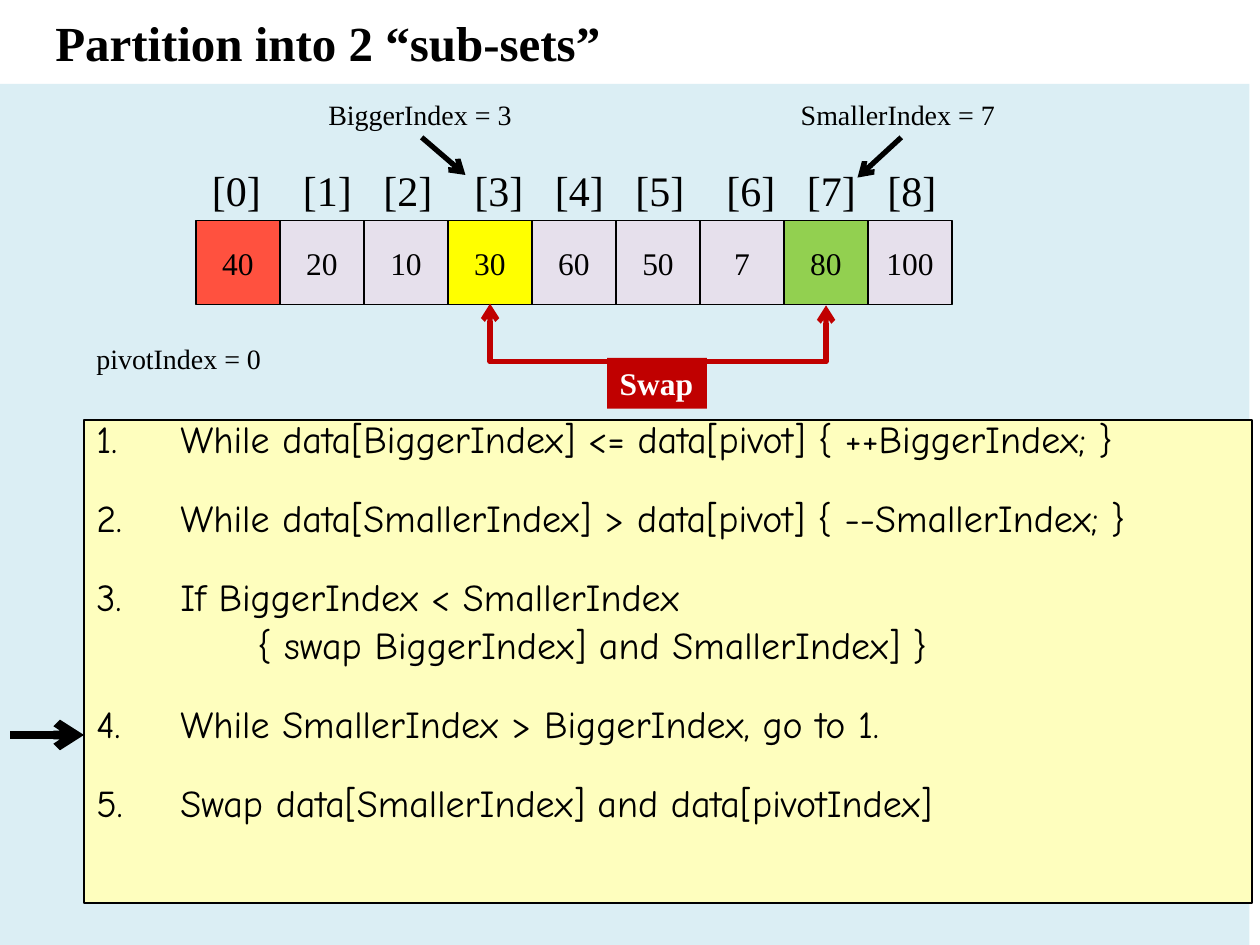
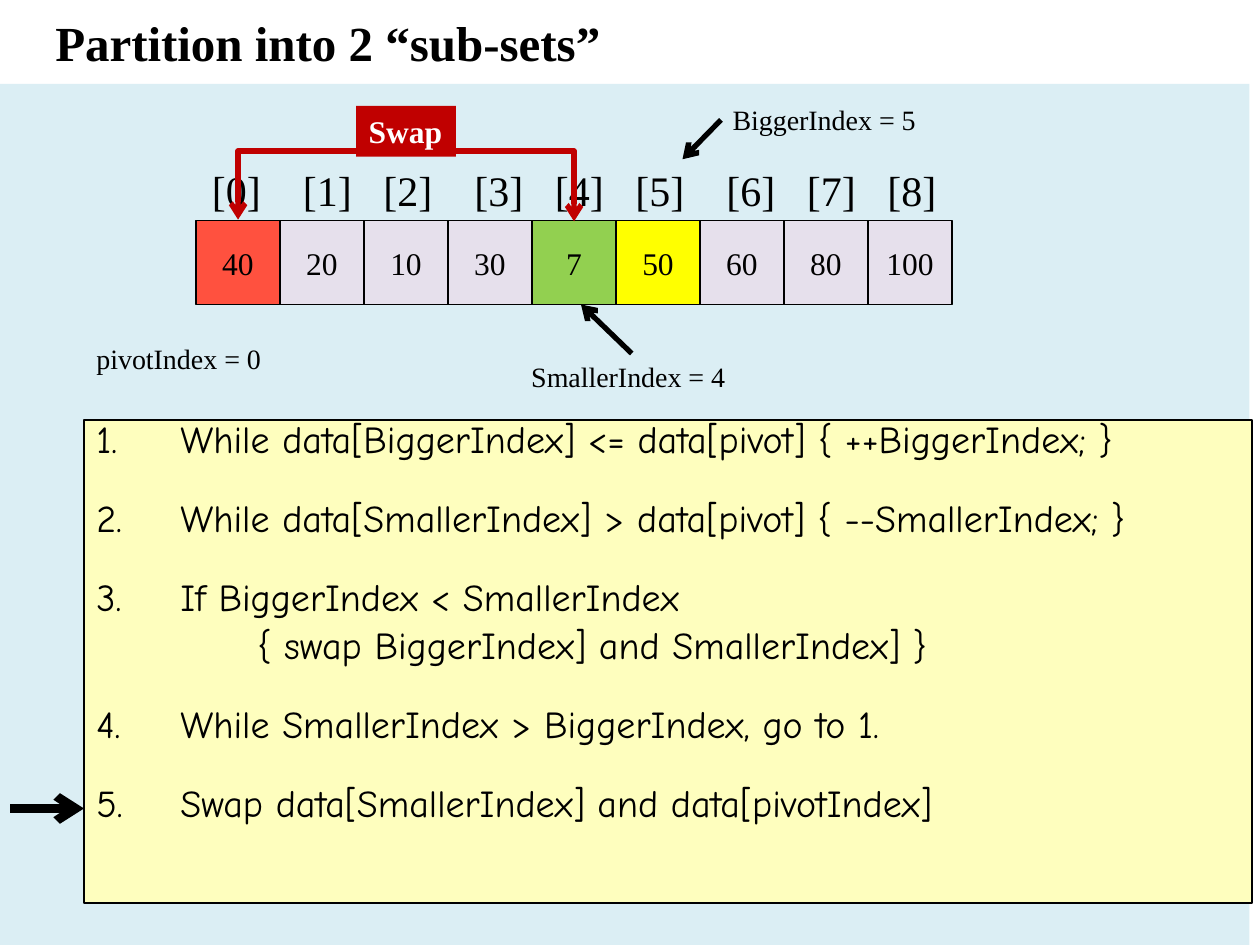
from lxml import etree
from pptx import Presentation
from pptx.dml.color import RGBColor
from pptx.enum.shapes import MSO_CONNECTOR, MSO_SHAPE
from pptx.enum.text import MSO_ANCHOR, PP_ALIGN
from pptx.oxml.ns import qn
from pptx.util import Pt

RECTANGLE = MSO_SHAPE.RECTANGLE
STRAIGHT, ELBOW = MSO_CONNECTOR.STRAIGHT, MSO_CONNECTOR.ELBOW
TOP, MIDDLE = MSO_ANCHOR.TOP, MSO_ANCHOR.MIDDLE
LEFT, CENTER = PP_ALIGN.LEFT, PP_ALIGN.CENTER

COLORS = {
    "black": "000000", "white": "FFFFFF", "panel": "DBEEF4", "steps": "FEFEBE",
    "cell": "E6E0EC", "pivot": "FF513F", "bigger": "FFFF00",
    "smaller": "92D050", "swap": "C00000",
}
SERIF, HAND = "Times New Roman", "Comic Neue"

# Array geometry
CELL, ARRAY_LEFT, ARRAY_TOP = 48, 112, 126
INDEX_GAPS = [52, 46, 52, 46, 46, 52, 46, 46]

# Each step: first line, then any indented continuation lines
STEPS = [
    ["While data[BiggerIndex] <= data[pivot] { ++BiggerIndex; }"],
    ["While data[SmallerIndex] > data[pivot] { --SmallerIndex; }"],
    ["If BiggerIndex < SmallerIndex", "{ swap BiggerIndex] and SmallerIndex] }"],
    ["While SmallerIndex > BiggerIndex, go to 1."],
    ["Swap data[SmallerIndex] and data[pivotIndex]"],
]


def rgb(color):
    return RGBColor.from_string(COLORS[color])


def add_run(paragraph, text, size, color="black", bold=False, font=SERIF):
    run = paragraph.add_run()
    run.text = text
    run.font.size, run.font.name, run.font.bold = Pt(size), font, bold
    run.font.color.rgb = rgb(color)


def add_box(slide, left, top, width, height, fill, outlined=False):
    box = slide.shapes.add_shape(RECTANGLE, Pt(left), Pt(top), Pt(width), Pt(height))
    box.shadow.inherit = False
    box.fill.solid()
    box.fill.fore_color.rgb = rgb(fill)
    if outlined:
        box.line.color.rgb = rgb("black")
        box.line.width = Pt(0.75)
    else:
        box.line.fill.background()
    return box


def write_line(box, text, size, color="black", bold=False,
               align=LEFT, anchor=TOP, wrap=False):
    frame = box.text_frame
    frame.word_wrap, frame.vertical_anchor = wrap, anchor
    paragraph = frame.paragraphs[0]
    paragraph.alignment = align
    add_run(paragraph, text, size, color, bold)
    return paragraph


def add_label(slide, text, left, top, width, height=26.5, size=16):
    label = slide.shapes.add_textbox(Pt(left), Pt(top), Pt(width), Pt(height))
    return write_line(label, text, size)


def style_connector(connector, color, width, ends):
    connector.line.color.rgb = rgb(color)
    connector.line.width = Pt(width)
    line = connector.line._get_or_add_ln()
    for end in ends:
        etree.SubElement(line, qn(f"a:{end}"), type="arrow")
    etree.SubElement(connector._element.spPr, qn("a:effectLst"))


def add_arrow(slide, start, end, width=3):
    arrow = slide.shapes.add_connector(STRAIGHT, *map(Pt, start + end))
    style_connector(arrow, "black", width, ["tailEnd"])


def add_swap_link(slide, first, last, y, bend):
    """Join two cells with a bracket that runs `bend` points below y."""
    span, thickness = (last - first) * CELL, 1
    center = ARRAY_LEFT + (first + last + 1) * CELL / 2
    left, top = center - thickness / 2, y - span / 2
    link = slide.shapes.add_connector(
        ELBOW, Pt(left), Pt(top), Pt(left + thickness), Pt(top + span))
    properties = link._element.spPr
    transform = properties.find(qn("a:xfrm"))
    transform.set("rot", str(270 * 60000))
    transform.set("flipH", "1")
    adjustments = properties.find(qn("a:prstGeom")).get_or_add_avLst()
    etree.SubElement(adjustments, qn("a:gd"), name="adj1",
                     fmla=f"val {round(bend / thickness * 100000)}")
    style_connector(link, "swap", 3, ["headEnd", "tailEnd"])


def add_swap_badge(slide, left, top):
    badge = add_box(slide, left, top, 57, 29, "swap")
    write_line(badge, "Swap", 18, "white", bold=True)


def add_array(slide, values, bigger, smaller):
    roles = {0: "pivot", bigger: "bigger", smaller: "smaller"}
    for i, value in enumerate(values):
        cell = add_box(slide, ARRAY_LEFT + i * CELL, ARRAY_TOP, CELL, CELL,
                       roles.get(i, "cell"), outlined=True)
        write_line(cell, str(value), 18, align=CENTER, anchor=MIDDLE)
    # Index row, spaced with tab stops
    indices = "\t".join(f"[{i}]" for i in range(len(values)))
    row = add_label(slide, indices, 114, 90.5, 450, 36, 24)
    tabs = etree.SubElement(row._p.get_or_add_pPr(), qn("a:tabLst"))
    for i in range(len(INDEX_GAPS)):
        etree.SubElement(tabs, qn("a:tab"), pos=str(Pt(sum(INDEX_GAPS[:i + 1]))), algn="l")


def add_steps(slide):
    box = add_box(slide, 48, 240, 667.5, 276, "steps", outlined=True)
    frame = box.text_frame
    frame.word_wrap, frame.vertical_anchor = True, TOP
    for number, lines in enumerate(STEPS, 1):
        for line_index, text in enumerate(lines):
            is_first = number == 1 and line_index == 0
            paragraph = frame.paragraphs[0] if is_first else frame.add_paragraph()
            paragraph.alignment = LEFT
            paragraph.line_spacing = Pt(20)
            paragraph.space_before = Pt(0 if is_first else 7.4 if line_index else 25.15)
            layout = paragraph._p.get_or_add_pPr()
            layout.set("marL", str(Pt(92 if line_index else 48)))
            layout.set("indent", str(Pt(0 if line_index else -48)))
            if line_index == 0:
                etree.SubElement(layout, qn("a:buAutoNum"),
                                 type="arabicPeriod", startAt=str(number))
            add_run(paragraph, text, 21.7, font=HAND)


def add_partition_slide(deck, values, bigger, smaller, step_y):
    slide = deck.slides.add_slide(deck.slide_layouts[6])
    add_box(slide, 0, 48, 714, 492, "panel")
    title = add_box(slide, 24.5, 6, 461.5, 36, "white")
    write_line(title, "Partition into 2 “sub-sets”", 28, bold=True,
               anchor=MIDDLE, wrap=True)
    add_steps(slide)
    add_array(slide, values, bigger, smaller)
    add_label(slide, "pivotIndex = 0", 48, 191.5, 110)
    add_arrow(slide, (6, step_y), (48, step_y), width=5)
    return slide


def main():
    deck = Presentation()
    deck.slide_width, deck.slide_height = Pt(720), Pt(540)

    # Swap the bigger and smaller values
    scan = add_partition_slide(
        deck, [40, 20, 10, 30, 60, 50, 7, 80, 100], bigger=3, smaller=7, step_y=420)
    add_label(scan, "BiggerIndex = 3", 180.5, 52, 121)
    add_label(scan, "SmallerIndex = 7", 450.5, 52, 127.5)
    add_arrow(scan, (241, 78.5), (266, 100))
    add_arrow(scan, (515, 78.5), (490, 101.5))
    add_swap_link(scan, 3, 7, y=174, bend=33.5)
    add_swap_badge(scan, 347, 204.5)

    # Swap the pivot into place
    finish = add_partition_slide(
        deck, [40, 20, 10, 30, 7, 50, 60, 80, 100], bigger=5, smaller=4, step_y=462)
    add_label(finish, "BiggerIndex = 5", 411.5, 55, 121)
    add_label(finish, "SmallerIndex = 4", 296.5, 202, 127.5)
    add_arrow(finish, (412, 68.5), (390, 91))
    add_arrow(finish, (361, 202), (332, 174))
    add_swap_link(finish, 0, 4, y=126, bend=-39.5)
    add_swap_badge(finish, 203.5, 60.5)

    deck.save("out.pptx")


if __name__ == "__main__":
    main()
